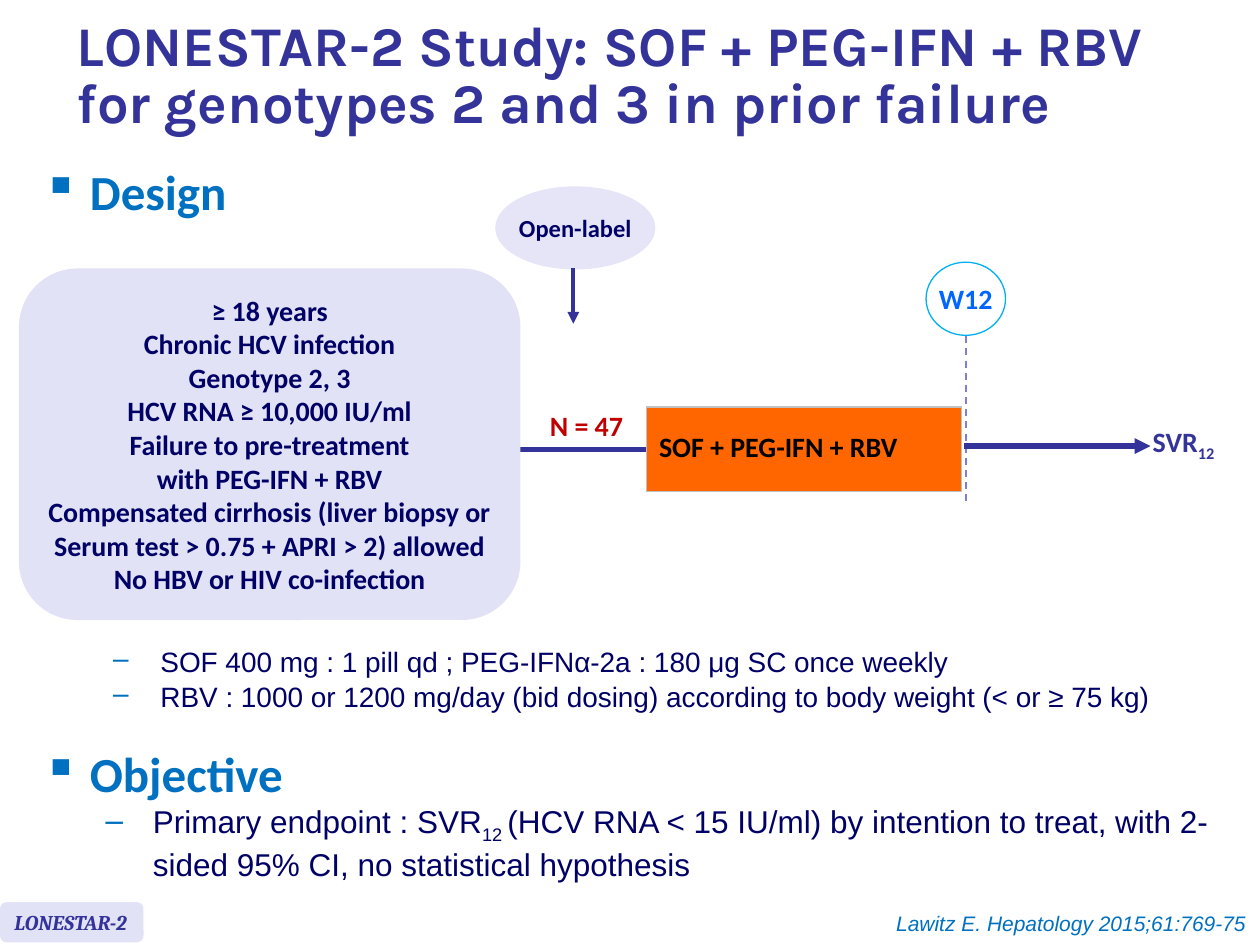
import dataclasses

import pptx
import pptx.chart.data
import pptx.dml.color
import pptx.enum.dml
import pptx.enum.shapes
import pptx.enum.text
import pptx.oxml
import pptx.oxml.ns
import pptx.util
from lxml import etree

Pt = pptx.util.Pt
SHAPE = pptx.enum.shapes.MSO_SHAPE
ALIGN = pptx.enum.text.PP_ALIGN
MIDDLE = pptx.enum.text.MSO_ANCHOR.MIDDLE
DASH = pptx.enum.dml.MSO_LINE.DASH


@dataclasses.dataclass(frozen=True)
class Theme:
    indigo: str = "333399"
    navy: str = "000066"
    blue: str = "0070C0"
    week: str = "0066FF"
    ring: str = "00B0F0"
    red: str = "C00000"
    orange: str = "FF6600"
    lavender: str = "E2E2F6"
    pale: str = "E5E5F7"
    dashes: str = "7E7ED4"
    grey: str = "C0C0C0"
    black: str = "000000"
    white: str = "FFFFFF"
    title: int = 32
    heading: int = 28
    body: int = 18
    label: int = 16
    small: int = 14
    footer: int = 12


@dataclasses.dataclass(frozen=True)
class Font:
    size: int
    color: str
    name: str = "Calibri"
    bold: bool = True
    italic: bool = False


def rgb(color):
    return pptx.dml.color.RGBColor.from_string(color)


def child(parent, tag, **attributes):
    return etree.SubElement(parent, pptx.oxml.ns.qn(tag), **attributes)


class Deck:
    def __init__(self, theme):
        self.theme = theme
        self.prs = pptx.Presentation()
        self.prs.slide_width, self.prs.slide_height = Pt(720), Pt(540)
        self.s = self.prs.slides.add_slide(self.prs.slide_layouts[6])

    def paragraph(self, tf, text, font, first=False, align=None, bullet=None,
                  left=27, before=0, spacing=None, level=0):
        """Add text; a list of parts puts every second part in subscript."""
        p = tf.paragraphs[0] if first else tf.add_paragraph()
        p.level = level
        if bullet:
            pPr = p._p.get_or_add_pPr()
            pPr.set("marL", str(Pt(left)))
            pPr.set("indent", str(Pt(-27)))
            child(child(pPr, "a:buClr"), "a:srgbClr", val=self.theme.blue)
            child(pPr, "a:buChar", char=bullet)
        if align is not None:
            p.alignment = align
        if spacing:
            p.line_spacing = spacing
        p.space_before = Pt(0 if first else before)
        for i, part in enumerate([text] if isinstance(text, str) else text):
            r = p.add_run()
            r.text = part
            if i % 2:
                r._r.get_or_add_rPr().set("baseline", "-25000")
        f = p.font
        f.name, f.size, f.bold, f.italic = font.name, Pt(font.size), font.bold, font.italic
        f.color.rgb = rgb(font.color)

    def text(self, box, lines, font, wrap=True, anchor=None, **style):
        tf = self.s.shapes.add_textbox(*map(Pt, box)).text_frame
        tf.word_wrap = wrap
        if anchor is not None:
            tf.vertical_anchor = anchor
        for i, line in enumerate(lines):
            self.paragraph(tf, line, font, first=i == 0, **style)
        return tf

    def shape(self, kind, box, fill, lines, font, line=None, wrap=True,
              margin=None, align=ALIGN.CENTER):
        sp = self.s.shapes.add_shape(kind, *map(Pt, box))
        sp.shadow.inherit = False
        sp.fill.solid()
        sp.fill.fore_color.rgb = rgb(fill)
        if line:
            sp.line.color.rgb = rgb(line)
            sp.line.width = Pt(0.75)
        else:
            sp.line.fill.background()
        tf = sp.text_frame
        tf.word_wrap, tf.vertical_anchor = wrap, MIDDLE
        if margin is not None:
            tf.margin_left = tf.margin_right = tf.margin_top = tf.margin_bottom = Pt(margin)
        for i, text in enumerate(lines):
            self.paragraph(tf, text, font, first=i == 0, align=align)

    def line(self, start, end, color, width, dash=None, arrow=False):
        c = self.s.shapes.add_connector(
            pptx.enum.shapes.MSO_CONNECTOR.STRAIGHT, *map(Pt, start + end))
        c.line.color.rgb = rgb(color)
        c.line.width = Pt(width)
        if dash:
            c.line.dash_style = dash
        if arrow:
            child(c.line._get_or_add_ln(), "a:tailEnd", type="triangle")
        child(c._element.spPr, "a:effectLst")

    def treatment_table(self, box, text, font):
        table = self.s.shapes.add_table(1, 1, *map(Pt, box)).table
        table.first_row = table.horz_banding = False
        cell = table.cell(0, 0)
        cell.vertical_anchor = MIDDLE
        self.paragraph(cell.text_frame, text, font, first=True, spacing=0.8)
        tcPr = cell._tc.get_or_add_tcPr()
        for side in "LRTB":
            ln = child(tcPr, f"a:ln{side}", w=str(Pt(1)))
            child(child(ln, "a:solidFill"), "a:srgbClr", val=self.theme.grey)
        cell.fill.solid()
        cell.fill.fore_color.rgb = rgb(self.theme.orange)


def main():
    t = Theme()
    deck = Deck(t)
    heading = Font(t.heading, t.blue)
    label = Font(t.label, t.navy)

    deck.shape(SHAPE.OVAL, (283, 106.5, 91.5, 47.5), t.pale, ["Open-label"],
               Font(t.small, t.navy), margin=0)
    deck.line((297.4, 257), (375.8, 257), t.indigo, 3)
    deck.line((552.2, 192.2), (552.2, 286.6), t.dashes, 1, dash=DASH)
    deck.shape(SHAPE.OVAL, (529.2, 149.8, 45.4, 41.8), t.white, ["W12"],
               Font(t.label, t.week), line=t.ring, wrap=False)
    deck.shape(SHAPE.ROUNDED_RECTANGLE, (10.8, 153.4, 286.6, 200.9), t.lavender, [
        "≥ 18 years",
        "Chronic HCV infection",
        "Genotype 2, 3",
        "HCV RNA ≥ 10,000 IU/ml",
        "Failure to pre-treatment",
        "with PEG-IFN + RBV",
        "Compensated cirrhosis (liver biopsy or Serum test > 0.75 + APRI > 2) allowed",
        "No HBV or HIV co-infection",
    ], label)

    deck.text((21.6, 365, 681.8, 46.8), [
        "SOF 400 mg : 1 pill qd ; PEG-IFNα-2a : 180 μg SC once weekly",
        "RBV : 1000 or 1200 mg/day (bid dosing) according to body weight (< or ≥ 75 kg)",
    ], Font(t.label, t.navy, "Arial", bold=False), bullet="–", left=63, before=0.7, level=1)
    objective = deck.text((17.3, 421.2, 681.1, 69.8), ["Objective"], heading, bullet="▪")
    deck.paragraph(objective, [
        "Primary endpoint : SVR", "12 ",
        "(HCV RNA < 15 IU/ml) by intention to treat, with 2-sided 95% CI, "
        "no statistical hypothesis",
    ], Font(t.body, t.navy, "Arial", bold=False), bullet="–", left=63, level=1)

    deck.treatment_table((369.4, 232.6, 180, 48.2), "SOF + PEG-IFN + RBV",
                         Font(t.label, t.black))
    deck.text((651.6, 239, 51.8, 26.6), [["SVR", "12"]], Font(t.label, t.indigo), wrap=False)
    deck.line((550.8, 254.9), (657.4, 254.9), t.indigo, 3, arrow=True)
    deck.text((306.7, 229.7, 56.9, 26.6), ["N = 47"], Font(t.label, t.red),
              align=ALIGN.CENTER)
    deck.line((327.6, 153.4), (327.6, 185), t.indigo, 2.25, arrow=True)

    deck.text((17.3, 88.6, 142.6, 45.4), ["Design"], heading, bullet="▪")
    deck.text((36.7, 5.8, 657.4, 77), [
        "LONESTAR-2 Study: SOF + PEG-IFN + RBV for genotypes 2 and 3 in prior failure",
    ], Font(t.title, t.indigo, "Karla"), anchor=MIDDLE, spacing=0.85)
    deck.shape(SHAPE.ROUNDED_RECTANGLE, (0, 515.5, 82, 23), t.lavender, ["LONESTAR-2"],
               Font(t.footer, t.indigo, "Cambria", italic=True), wrap=False, align=ALIGN.LEFT)
    deck.text((496.8, 517, 222.5, 21.6), ["Lawitz E. Hepatology 2015;61:769-75"],
              Font(t.footer, t.blue, "Arial", bold=False, italic=True),
              wrap=False, align=ALIGN.RIGHT)
    deck.prs.save("out.pptx")


if __name__ == "__main__":
    main()
